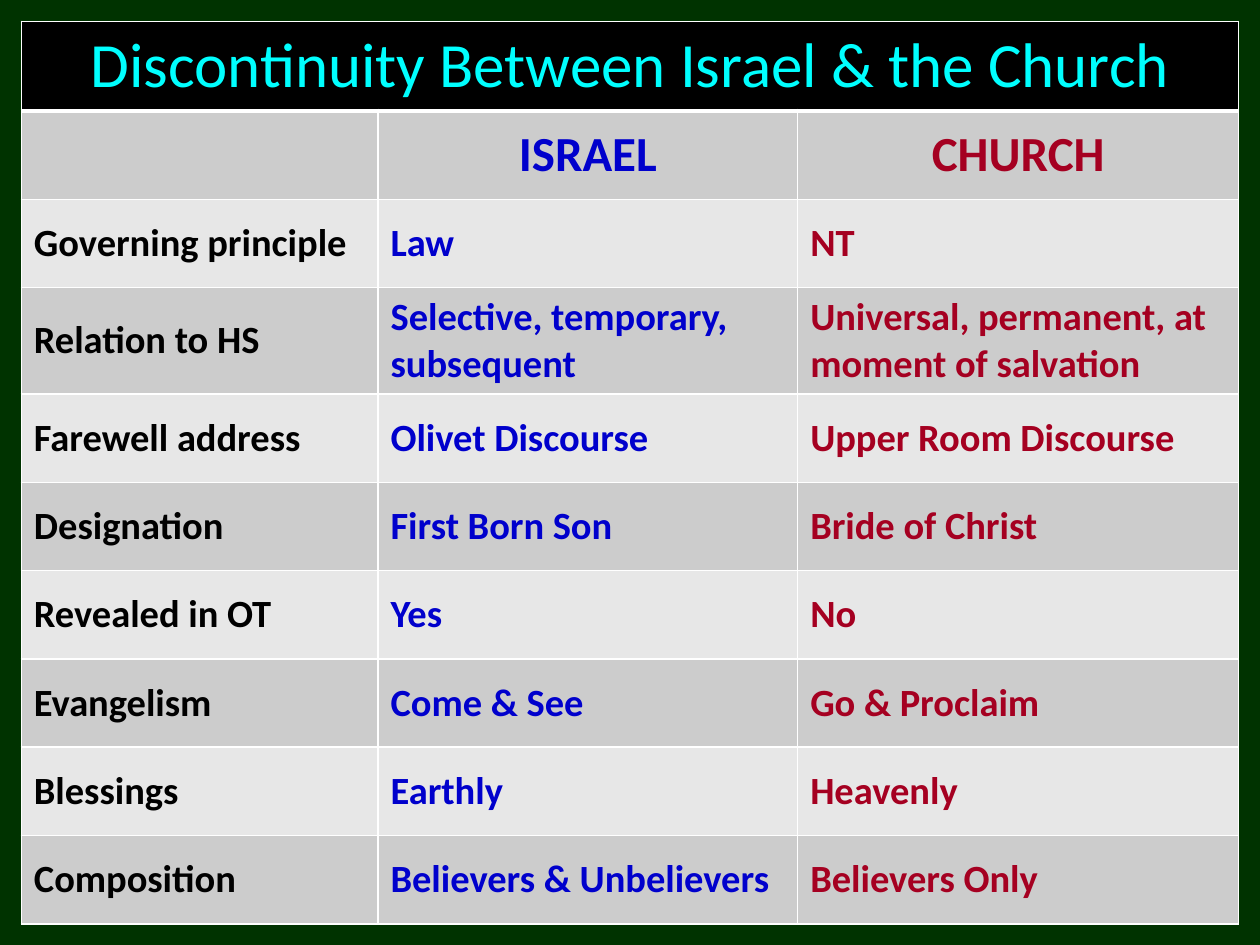
from dataclasses import dataclass

from lxml.etree import SubElement
from pptx import Presentation
from pptx.dml.color import RGBColor
from pptx.enum.text import MSO_ANCHOR, PP_ALIGN
from pptx.oxml.ns import qn
from pptx.util import Cm, Pt


@dataclass(frozen=True)
class Theme:
    font: str = "Calibri"
    background: str = "003300"
    title_fill: str = "000000"
    title_text: str = "00FFFF"
    bands: tuple = ("CCCCCC", "E7E7E7")
    columns: tuple = ("000000", "0000CC", "A50021")
    border: str = "FFFFFF"
    title_size: int = 36
    header_size: int = 28
    body_size: int = 22


THEME = Theme()
TITLE = "Discontinuity Between Israel & the Church"
ROWS = [
    ("", "ISRAEL", "CHURCH"),
    ("Governing principle", "Law", "NT"),
    ("Relation to HS", "Selective, temporary, subsequent",
     "Universal, permanent, at moment of salvation"),
    ("Farewell address", "Olivet Discourse", "Upper Room Discourse"),
    ("Designation", "First Born Son", "Bride of Christ"),
    ("Revealed in OT", "Yes", "No"),
    ("Evangelism", "Come & See", "Go & Proclaim"),
    ("Blessings", "Earthly", "Heavenly"),
    ("Composition", "Believers & Unbelievers", "Believers Only"),
]
COLUMN_WIDTHS = (Cm(7.19), Cm(8.46), Cm(8.89))
ROW_HEIGHT = Cm(1.78)
MARGIN = Cm(0.43)


def set_borders(cell, bottom=1):
    """Outline a cell; call before filling it, as lines precede the fill in XML."""
    tc_pr = cell._tc.get_or_add_tcPr()
    for side, width in (("L", 1), ("R", 1), ("T", 1), ("B", bottom)):
        ln = SubElement(tc_pr, qn(f"a:ln{side}"), w=str(Pt(width)))
        fill = SubElement(ln, qn("a:solidFill"))
        SubElement(fill, qn("a:srgbClr"), val=THEME.border)


def style_cell(cell, fill, bottom=1):
    set_borders(cell, bottom)
    cell.fill.solid()
    cell.fill.fore_color.rgb = RGBColor.from_string(fill)
    cell.vertical_anchor = MSO_ANCHOR.MIDDLE


def write_cell(cell, text, size, color, bold=True, align=PP_ALIGN.LEFT):
    p = cell.text_frame.paragraphs[0]
    p.alignment = align
    r = p.add_run()
    r.text = text
    r.font.name = THEME.font
    r.font.size = Pt(size)
    r.font.bold = bold
    r.font.color.rgb = RGBColor.from_string(color)


def add_title_row(table):
    for cell in table.rows[0].cells:
        style_cell(cell, THEME.title_fill, bottom=3)
    title = table.cell(0, 0)
    title.merge(table.cell(0, len(COLUMN_WIDTHS) - 1))
    write_cell(title, TITLE, THEME.title_size, THEME.title_text,
               bold=False, align=PP_ALIGN.CENTER)


def add_comparison_rows(table):
    for i, row in enumerate(ROWS):
        size = THEME.body_size if i else THEME.header_size
        align = PP_ALIGN.LEFT if i else PP_ALIGN.CENTER
        for j, (text, color) in enumerate(zip(row, THEME.columns)):
            cell = table.cell(i + 1, j)
            style_cell(cell, THEME.bands[i % 2])
            if text:
                write_cell(cell, text, size, color, align=align)


def add_comparison_table(s):
    count = len(ROWS) + 1
    table = s.shapes.add_table(count, len(COLUMN_WIDTHS), MARGIN, MARGIN,
                               sum(COLUMN_WIDTHS), ROW_HEIGHT * count).table
    for column, width in zip(table.columns, COLUMN_WIDTHS):
        column.width = width
    for row in table.rows:
        row.height = ROW_HEIGHT
    add_title_row(table)
    add_comparison_rows(table)


def main():
    prs = Presentation()
    prs.slide_width, prs.slide_height = Cm(25.4), Cm(19.05)
    s = prs.slides.add_slide(prs.slide_layouts[6])
    s.background.fill.solid()
    s.background.fill.fore_color.rgb = RGBColor.from_string(THEME.background)
    add_comparison_table(s)
    prs.save("out.pptx")


if __name__ == "__main__":
    main()
